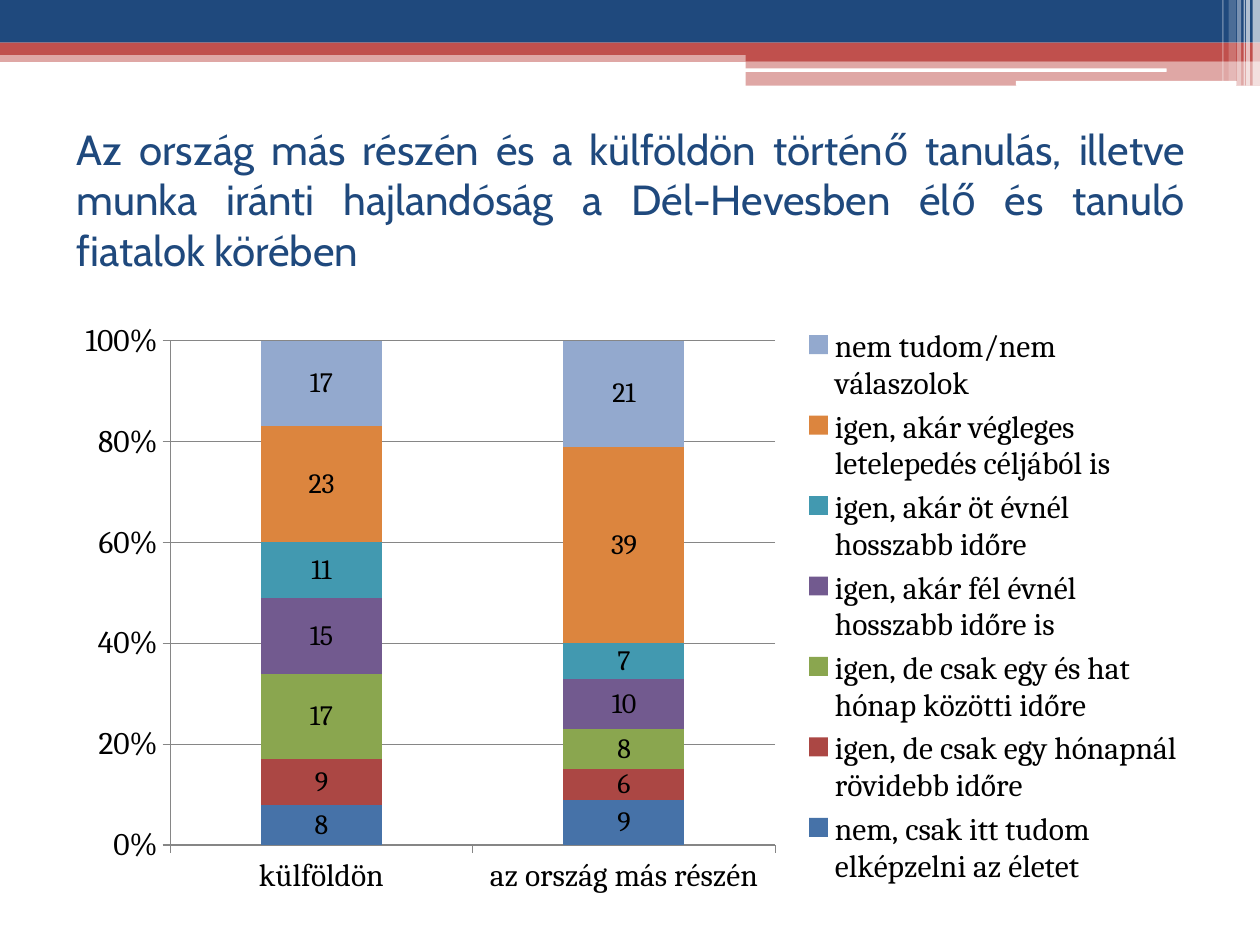
from lxml.etree import SubElement
from pptx import Presentation
from pptx.chart.data import CategoryChartData
from pptx.dml.color import RGBColor
from pptx.enum.chart import XL_CHART_TYPE, XL_LEGEND_POSITION, XL_TICK_MARK
from pptx.enum.shapes import MSO_SHAPE
from pptx.enum.text import MSO_ANCHOR, MSO_AUTO_SIZE, PP_ALIGN
from pptx.oxml.ns import qn
from pptx.util import Cm, Pt

NAVY = RGBColor(0x1F, 0x49, 0x7D)
RED = RGBColor(0xC0, 0x50, 0x4D)
WHITE = RGBColor(0xFF, 0xFF, 0xFF)
BLACK = RGBColor(0x00, 0x00, 0x00)
GREY = RGBColor(0x86, 0x86, 0x86)

TITLE = ("Az ország más részén és a külföldön történő tanulás, illetve munka iránti "
         "hajlandóság a Dél-Hevesben élő és tanuló fiatalok körében")
CATEGORIES = ["külföldön", "az ország más részén"]
ANSWERS = [
    ("nem, csak itt tudom elképzelni az életet", (8, 9), RGBColor(0x46, 0x72, 0xA8)),
    ("igen, de csak egy hónapnál rövidebb időre", (9, 6), RGBColor(0xAB, 0x47, 0x44)),
    ("igen, de csak egy és hat hónap közötti időre", (17, 8), RGBColor(0x8A, 0xA6, 0x4F)),
    ("igen, akár fél évnél hosszabb időre is", (15, 10), RGBColor(0x72, 0x5A, 0x8F)),
    ("igen, akár öt évnél hosszabb időre", (11, 7), RGBColor(0x42, 0x99, 0xB0)),
    ("igen, akár végleges letelepedés céljából is", (23, 39), RGBColor(0xDC, 0x85, 0x3E)),
    ("nem tudom/nem válaszolok", (17, 21), RGBColor(0x93, 0xA9, 0xCE)),
]

# chart size, then left, top, width, height of its parts inside it, in cm
CHART_WIDTH, CHART_HEIGHT = 22.86, 12.01
PLOT_BOX = (2.16, 0.62, 12.2, 10.17)
LEGEND_BOX = (15.1, 0.24, 7.5, 11.5)

# left, top, width, height in cm, colour, opacity in percent
BANDS = [
    (0, 1.02, 25.4, 0.23, RED, 50),
    (0, 0, 25.4, 0.86, NAVY, 100),
    (0, 0.86, 25.4, 0.25, RED, 100),
    (15.03, 0.98, 10.37, 0.25, RED, 100),
    (15.03, 1.23, 10.37, 0.5, RED, 50),
]
ROUNDED_BARS = [(15.01, 1.38, 8.51, 0.07), (20.48, 1.63, 4.45, 0.1)]
# left, width, height in cm, opacity in percent
STRIPES = [
    (25.25, 0.15, 1.73, 65),
    (25.12, 0.08, 1.73, 65),
    (25.07, 0.03, 1.73, 60),
    (24.94, 0.08, 1.73, 40),
    (24.77, 0.15, 1.63, 20),
    (24.64, 0.03, 1.63, 30),
]


def add_bar(slide, left, top, width, height, color, opacity=100, kind=MSO_SHAPE.RECTANGLE):
    shape = slide.shapes.add_shape(kind, Cm(left), Cm(top), Cm(width), Cm(height))
    shape.shadow.inherit = False
    shape.line.fill.background()
    shape.fill.solid()
    shape.fill.fore_color.rgb = color
    if opacity < 100:
        color_element = shape.fill._xPr.find(".//" + qn("a:srgbClr"))
        SubElement(color_element, qn("a:alpha"), val=str(opacity * 1000))


def add_header(slide):
    for band in BANDS:
        add_bar(slide, *band)
    for box in ROUNDED_BARS:
        add_bar(slide, *box, WHITE, kind=MSO_SHAPE.ROUNDED_RECTANGLE)
    for left, width, height, opacity in STRIPES:
        add_bar(slide, left, 0, width, height, WHITE, opacity)


def fill_title(slide):
    title = slide.shapes.title
    title.left, title.top, title.width, title.height = Cm(1.29), Cm(2.53), Cm(22.86), Cm(2.97)
    frame = title.text_frame
    frame.word_wrap = True
    frame.auto_size = MSO_AUTO_SIZE.NONE
    frame.vertical_anchor = MSO_ANCHOR.MIDDLE
    paragraph = frame.paragraphs[0]
    paragraph.alignment = PP_ALIGN.JUSTIFY
    run = paragraph.add_run()
    run.text = TITLE
    set_font(run.font, 24, NAVY, "Cabin")


def set_font(font, size, color=BLACK, name="Cambria"):
    font.name = name
    font.size = Pt(size)
    font.color.rgb = color


def set_layout(parent, box, inner=False):
    """Place a chart part at a box given in cm from the chart's corner."""
    layout = parent.find(qn("c:layout"))
    if layout is None:
        layout = SubElement(parent, qn("c:layout"))
        before = parent.find(qn("c:legendPos"))
        if before is None:
            parent.insert(0, layout)
        else:
            before.addnext(layout)
    manual = SubElement(layout, qn("c:manualLayout"))
    if inner:
        SubElement(manual, qn("c:layoutTarget"), val="inner")
    for mode in ("xMode", "yMode"):
        SubElement(manual, qn("c:" + mode), val="edge")
    for name, length, whole in zip("xywh", box, (CHART_WIDTH, CHART_HEIGHT) * 2):
        SubElement(manual, qn("c:" + name), val=str(length / whole))


def format_axis(axis):
    axis.major_tick_mark = XL_TICK_MARK.OUTSIDE
    axis.minor_tick_mark = XL_TICK_MARK.NONE
    axis.format.line.color.rgb = GREY
    set_font(axis.tick_labels.font, 18)


def format_series(series, color):
    series.format.fill.solid()
    series.format.fill.fore_color.rgb = color
    labels = series.data_labels
    labels.show_value = True
    set_font(labels.font, 16)


def add_answer_chart(slide):
    data = CategoryChartData()
    data.categories = CATEGORIES
    for name, values, _ in ANSWERS:
        data.add_series(name, values)
    chart = slide.shapes.add_chart(XL_CHART_TYPE.COLUMN_STACKED_100, Cm(1.27), Cm(6.25),
                                   Cm(CHART_WIDTH), Cm(CHART_HEIGHT), data).chart
    set_font(chart.font, 18)
    chart.has_title = False

    plot = chart.plots[0]
    plot.gap_width = 150
    plot.overlap = 100
    plot.vary_by_categories = False
    for series, (_, _, color) in zip(plot.series, ANSWERS):
        format_series(series, color)

    format_axis(chart.category_axis)
    value_axis = chart.value_axis
    format_axis(value_axis)
    value_axis.minimum_scale, value_axis.maximum_scale = 0, 1
    value_axis.major_unit = 0.2
    value_axis.tick_labels.number_format = "0%"
    value_axis.tick_labels.number_format_is_linked = False
    value_axis.has_major_gridlines = True
    value_axis.major_gridlines.format.line.color.rgb = GREY

    chart.has_legend = True
    chart.legend.position = XL_LEGEND_POSITION.RIGHT
    chart.legend.include_in_layout = False
    set_font(chart.legend.font, 18)
    plot_area = chart._chartSpace.find(".//" + qn("c:plotArea"))
    set_layout(plot_area, PLOT_BOX, inner=True)
    set_layout(chart.legend._element, LEGEND_BOX)


def main():
    presentation = Presentation()
    presentation.slide_width, presentation.slide_height = Cm(25.4), Cm(19.05)
    slide = presentation.slides.add_slide(presentation.slide_layouts[5])
    add_header(slide)
    fill_title(slide)
    add_answer_chart(slide)
    presentation.save("out.pptx")


if __name__ == "__main__":
    main()
